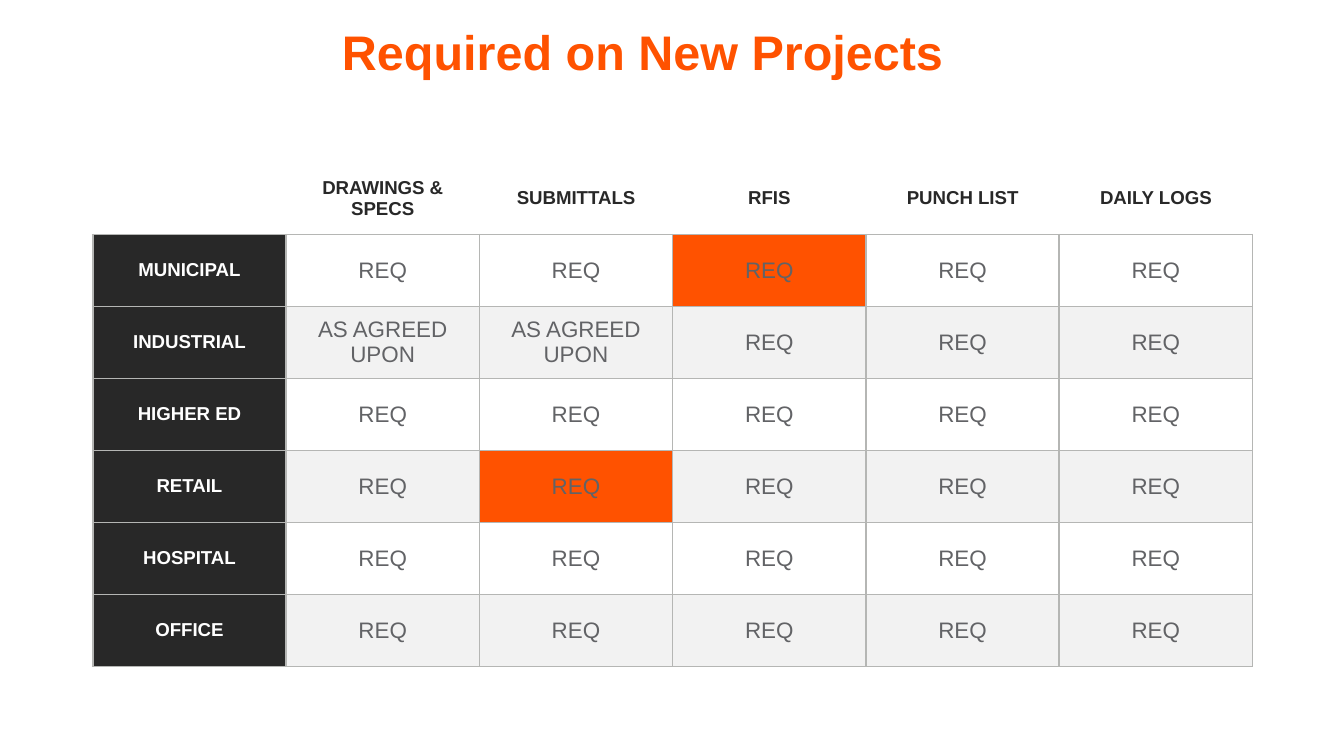
from lxml import etree
from pptx import Presentation
from pptx.dml.color import RGBColor
from pptx.enum import text
from pptx.oxml import ns
from pptx.util import Inches, Pt

ORANGE = RGBColor(0xFF, 0x52, 0x00)
DARK = RGBColor(0x28, 0x28, 0x28)
GREY = RGBColor(0x62, 0x63, 0x66)
BAND = RGBColor(0xF2, 0xF2, 0xF2)
WHITE = RGBColor(0xFF, 0xFF, 0xFF)
BORDER = RGBColor(0xB5, 0xB6, 0xB4)

TITLE = "Required on New Projects"
HEADERS = ["", "DRAWINGS & SPECS", "SUBMITTALS", "RFIS", "PUNCH LIST", "DAILY LOGS"]
PROJECTS = ["MUNICIPAL", "INDUSTRIAL", "HIGHER ED", "RETAIL", "HOSPITAL", "OFFICE"]
DEFAULT = "REQ"
EXCEPTIONS = {
    ("INDUSTRIAL", "DRAWINGS & SPECS"): "AS AGREED UPON",
    ("INDUSTRIAL", "SUBMITTALS"): "AS AGREED UPON",
}
HIGHLIGHTS = {("MUNICIPAL", "RFIS"), ("RETAIL", "SUBMITTALS")}

SLIDE_W = Inches(10)
SLIDE_H = SLIDE_W * 9 // 16
LEFT, TOP, WIDTH, HEIGHT = (Inches(n) for n in (0.69, 1.21, 8.63, 3.75))
HEADER_FONT = {"name": "Arial", "size": Pt(10), "bold": True}
BODY_FONT = {"name": "Arial", "size": Pt(12), "bold": False}
TITLE_FONT = {"name": "Arial", "size": Pt(26), "bold": True}
CELL_FORMAT = {
    "margin_left": Inches(0.11), "margin_right": Inches(0.11),
    "margin_top": Inches(0.07), "margin_bottom": Inches(0.07),
    "vertical_anchor": text.MSO_ANCHOR.MIDDLE,
}


def apply(target, values):
    for name, value in values.items():
        setattr(target, name, value)


def write(p, words, font, color):
    p.alignment = text.PP_ALIGN.CENTER
    r = p.add_run()
    r.text = words
    apply(r.font, font)
    r.font.color.rgb = color


def set_borders(cell, visible):
    props = cell._tc.get_or_add_tcPr()
    for side in "LRTB":
        line = etree.SubElement(props, ns.qn(f"a:ln{side}"), w=str(Pt(1)))
        if side in visible:
            fill = etree.SubElement(line, ns.qn("a:solidFill"))
            etree.SubElement(fill, ns.qn("a:srgbClr"), val=str(BORDER))
        else:
            etree.SubElement(line, ns.qn("a:noFill"))


def cell_style(row, col):
    if row == 0:
        return HEADERS[col], HEADER_FONT, DARK, WHITE
    project = PROJECTS[row - 1]
    if col == 0:
        return project, HEADER_FONT, WHITE, DARK
    key = project, HEADERS[col]
    fill = ORANGE if key in HIGHLIGHTS else (WHITE if row % 2 else BAND)
    return EXCEPTIONS.get(key, DEFAULT), BODY_FONT, GREY, fill


def add_title(s):
    sp = s.shapes.title
    apply(sp, {"left": Inches(0.26), "top": Inches(0.19),
               "width": Inches(9.05), "height": Inches(0.87)})
    tf = sp.text_frame
    apply(tf, {"margin_left": Inches(0.04), "margin_right": Inches(0.04),
               "margin_top": Inches(0.02), "margin_bottom": Inches(0.02),
               "vertical_anchor": text.MSO_ANCHOR.TOP, "word_wrap": True})
    p = tf.paragraphs[0]
    p.line_spacing = 0.9
    write(p, TITLE, TITLE_FONT, ORANGE)


def add_requirements(s):
    rows, cols = len(PROJECTS) + 1, len(HEADERS)
    table = s.shapes.add_table(rows, cols, LEFT, TOP, WIDTH, HEIGHT).table
    apply(table, {"first_row": False, "horz_banding": False})
    for row in range(rows):
        for col in range(cols):
            cell = table.cell(row, col)
            words, font, color, fill = cell_style(row, col)
            apply(cell, CELL_FORMAT)
            set_borders(cell, "LRTB" if row else "B")
            cell.fill.solid()
            cell.fill.fore_color.rgb = fill
            if words:
                write(cell.text_frame.paragraphs[0], words, font, color)


def main():
    prs = Presentation()
    prs.slide_width, prs.slide_height = SLIDE_W, SLIDE_H
    s = prs.slides.add_slide(prs.slide_layouts[5])
    add_title(s)
    add_requirements(s)
    prs.save("out.pptx")


if __name__ == "__main__":
    main()
